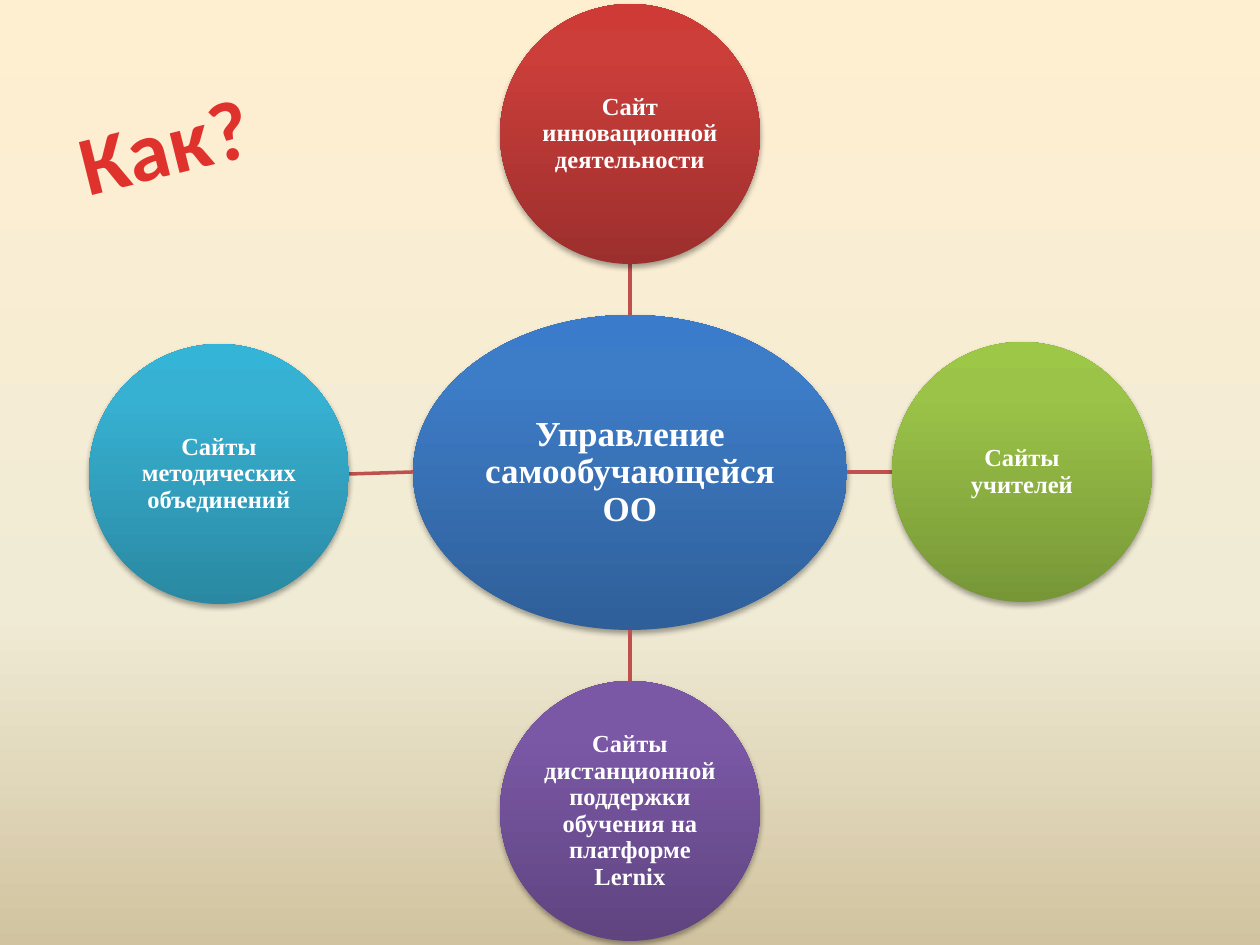
from lxml import etree
from pptx import Presentation
from pptx import util as u
from pptx.dml.color import RGBColor
from pptx.enum import shapes, text
from pptx.oxml.ns import qn

PX = 914400 / 126
HUES = {
    "back": [(0, "FFEFD1"), (65, "F0EBD5"), (100, "D1C39F")],
    "blue": [(0, "2F5F99"), (80, "3D7CC7"), (100, "3A7CCB")],
    "red": [(0, "9C2F2D"), (80, "CB3E3A"), (100, "CE3B37")],
    "green": [(0, "779737"), (80, "9BC348"), (100, "9DC746")],
    "purple": [(0, "5F4480"), (80, "7B58A6"), (100, "7C57A8")],
    "teal": [(0, "2A88A2"), (80, "37B1D2"), (100, "34B4D6")],
    "title": [(25, "E0322D"), (100, "A2201C")],
    "line": "C0504D",
    "white": "FFFFFF",
    "shade": "000000",
}


def px(*nums):
    return [u.Emu(round(n * PX)) for n in nums]


def node(root, tag, **attrs):
    return etree.SubElement(root, qn(tag), {k: str(v) for k, v in attrs.items()})


def blend(fill, root, stops, angle):
    fill.gradient()
    grad = next(root.iter(qn("a:gradFill")))
    for part in list(grad):
        grad.remove(part)
    list_el = node(grad, "a:gsLst")
    for pos, hue in stops:
        node(node(list_el, "a:gs", pos=pos * 1000), "a:srgbClr", val=hue)
    node(grad, "a:lin", ang=angle * 60000, scaled=0)


def shade(shape):
    shape.shadow.inherit = False
    effects = shape._element.spPr.find(qn("a:effectLst"))
    outer = node(effects, "a:outerShdw", blurRad=u.Pt(3.1), dist=u.Pt(1.8),
                 dir=5400000, rotWithShape=0)
    hue = node(outer, "a:srgbClr", val=HUES["shade"])
    node(hue, "a:alpha", val=35000)


def write(para, words, face, size):
    run = para.add_run()
    run.text = words
    run.font.name, run.font.size, run.font.bold = face, u.Pt(size), True
    return run


def disc(slide, box, words, hue, size):
    shape = slide.shapes.add_shape(shapes.MSO_SHAPE.OVAL, *px(*box))
    blend(shape.fill, shape._element.spPr, HUES[hue], 270)
    shape.line.fill.background()
    shade(shape)
    frame = shape.text_frame
    frame.word_wrap = True
    frame.vertical_anchor = text.MSO_ANCHOR.MIDDLE
    frame.margin_left = frame.margin_right = px(1)[0]
    frame.margin_top = frame.margin_bottom = px(1)[0]
    para = frame.paragraphs[0]
    para.alignment = text.PP_ALIGN.CENTER
    para.line_spacing = 0.9
    run = write(para, words, "Times New Roman", size)
    run.font.color.rgb = RGBColor.from_string(HUES["white"])


def spoke(slide, start, end):
    line = slide.shapes.add_connector(shapes.MSO_CONNECTOR.STRAIGHT, *px(*start, *end))
    line.line.color.rgb = RGBColor.from_string(HUES["line"])
    line.line.width = u.Pt(2)
    node(line._element.spPr, "a:effectLst")


def side(box, way):
    left, top, wide, high = box
    across, down = way
    return (left + wide * (1 + across) // 2, top + high * (1 + down) // 2)


def wheel(slide, box):
    left, top, wide, high = box
    hub = (left + 324, top + 311, 434, 315)
    disc(slide, hub, "Управление самообучающейся ОО", "blue", 20)
    rim = [
        (411, 0, (0, -1), "red", "Сайт инновационной деятельности"),
        (803, 338, (1, 0), "green", "Сайты учителей"),
        (411, 677, (0, 1), "purple",
         "Сайты дистанционной поддержки обучения на платформе Lernix"),
        (0, 340, (-1, 0), "teal", "Сайты методических объединений"),
    ]
    for x, y, way, hue, words in rim:
        spot = (left + x, top + y, 260, 260)
        back = tuple(-n for n in way)
        spoke(slide, side(hub, way), side(spot, back))
        disc(slide, spot, words, hue, 14)


def title(slide, box):
    label = slide.shapes.add_textbox(*px(*box))
    label.rotation = 346
    label.text_frame.word_wrap = True
    run = write(label.text_frame.paragraphs[0], "Как?", "Calibri", 48)
    blend(run.font.fill, run._r, HUES["title"], 90)
    run.font._element.set("spc", "50")


def main():
    deck = Presentation()
    deck.slide_width, deck.slide_height = px(1260, 945)
    slide = deck.slides.add_slide(deck.slide_layouts[6])
    blend(slide.background.fill, slide._element, HUES["back"], 90)
    wheel(slide, (89, 4, 1063, 937))
    title(slide, (63, 67, 357, 115))
    deck.save("out.pptx")


if __name__ == "__main__":
    main()
